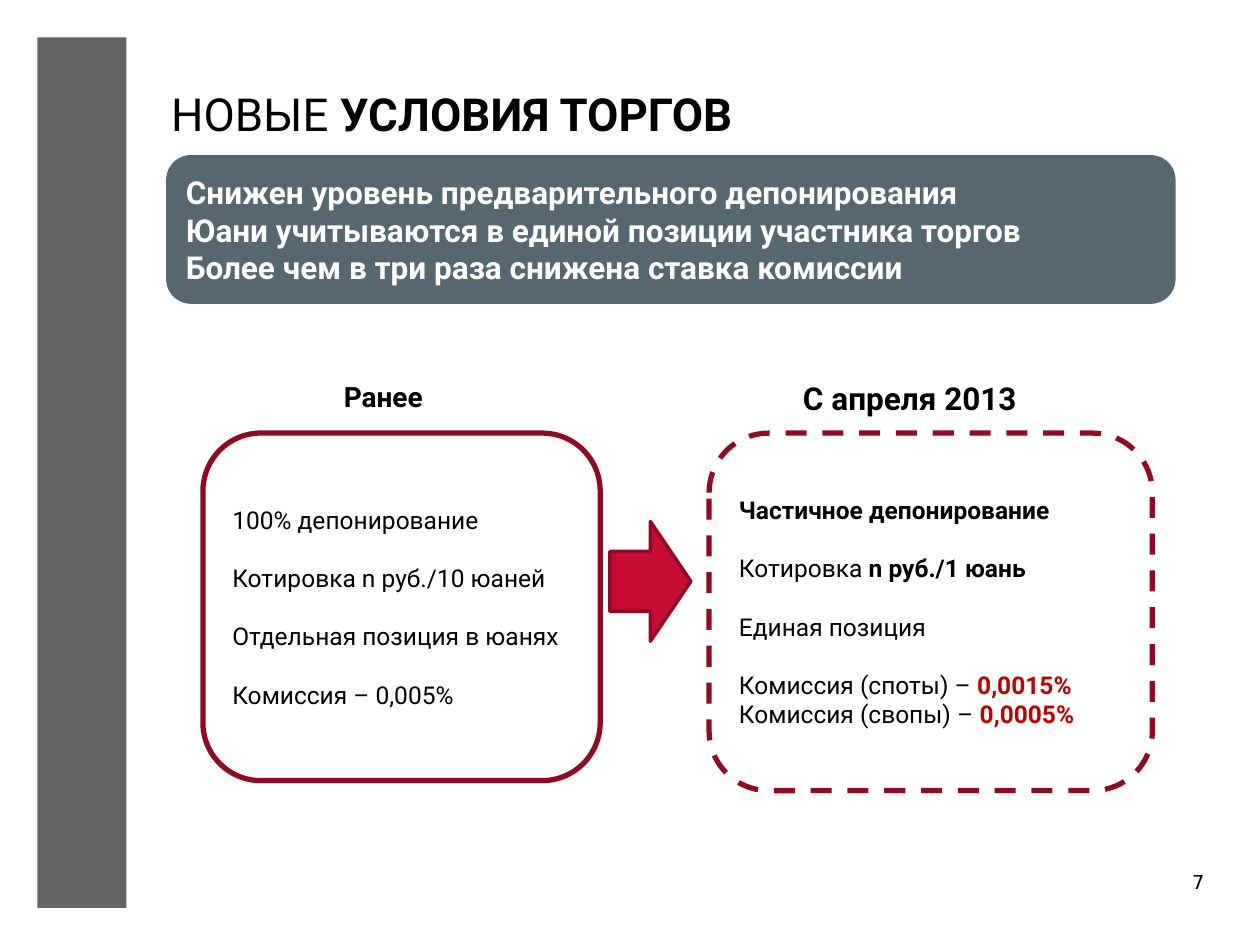
from pptx import Presentation
from pptx.dml.color import RGBColor
from pptx.enum.dml import MSO_LINE
from pptx.enum.shapes import MSO_SHAPE
from pptx.enum.text import MSO_ANCHOR, PP_ALIGN
from pptx.util import Pt

BLACK = RGBColor(0x00, 0x00, 0x00)
WHITE = RGBColor(0xFF, 0xFF, 0xFF)
GRAY = RGBColor(0x61, 0x63, 0x65)
SLATE = RGBColor(0x55, 0x67, 0x71)
RED = RGBColor(0xC6, 0x0C, 0x30)
MAROON = RGBColor(0x92, 0x09, 0x24)
ACCENT = RGBColor(0xC0, 0x00, 0x00)


class SlideBuilder:
    """Holds the text style and the current slide and adds elements to it."""

    def __init__(self, slide, font="Roboto"):
        self.slide = slide
        self.font = font

    def shape(self, kind, box, fill=None, line=None, width=0, dash=None):
        s = self.slide.shapes.add_shape(kind, *map(Pt, box))
        s.shadow.inherit = False
        if fill is None:
            s.fill.background()
        else:
            s.fill.solid()
            s.fill.fore_color.rgb = fill
        if line is None:
            s.line.fill.background()
        else:
            s.line.color.rgb = line
            s.line.width = Pt(width)
            if dash is not None:
                s.line.dash_style = dash
        return s

    def paragraph(self, p, runs, size, color=BLACK, align=PP_ALIGN.LEFT, font=None):
        p.alignment = align
        p.font.name = font or self.font
        p.font.size = Pt(size)
        p.font.color.rgb = color
        p.font.bold = all(bold for _, bold, _ in runs)
        for text, bold, run_color in runs:
            r = p.add_run()
            r.text = text
            if bold != p.font.bold:
                r.font.bold = bold
            if run_color is not None:
                r.font.color.rgb = run_color

    def text(self, box, runs, size, align=PP_ALIGN.LEFT, font=None):
        s = self.slide.shapes.add_textbox(*map(Pt, box))
        tf = s.text_frame
        tf.word_wrap = True
        self.paragraph(tf.paragraphs[0], runs, size, align=align, font=font)
        return tf

    def panel(self, box, lines, size, color=BLACK, **style):
        s = self.shape(MSO_SHAPE.ROUNDED_RECTANGLE, box, **style)
        tf = s.text_frame
        tf.word_wrap = True
        tf.vertical_anchor = MSO_ANCHOR.MIDDLE
        for i, (gap, runs) in enumerate(lines):
            p = tf.add_paragraph() if i else tf.paragraphs[0]
            if gap:
                p.space_before = Pt(gap)
            self.paragraph(p, runs, size, color)


def plain(text):
    return text, False, None


def bold(text, color=None):
    return text, True, color


def main():
    prs = Presentation()
    prs.slide_width, prs.slide_height = Pt(720), Pt(540)
    sb = SlideBuilder(prs.slides.add_slide(prs.slide_layouts[6]))
    gap = 16.5

    sb.shape(MSO_SHAPE.RECTANGLE, (21.3, 21.3, 51, 497.5), fill=GRAY)
    tf = sb.text((660.2, 487.4, 28.1, 28.1), [plain("7")], 11, PP_ALIGN.RIGHT, "DejaVu Sans")
    tf.margin_left = tf.margin_right = 0
    tf.paragraphs[0].line_spacing = 1.5

    sb.text((90.7, 45.4, 584, 88.6), [plain("НОВЫЕ "), bold("УСЛОВИЯ ТОРГОВ")], 26)

    before = [
        (0, [plain("100% депонирование")]),
        (gap, [plain("Котировка n руб./10 юаней")]),
        (gap, [plain("Отдельная позиция в юанях")]),
        (gap, [plain("Комиссия – 0,005%")]),
    ]
    after = [
        (0, [bold("Частичное депонирование")]),
        (gap, [plain("Котировка "), bold("n руб./1 юань")]),
        (gap, [plain("Единая позиция")]),
        (gap, [plain("Комиссия (споты) – "), bold("0,0015%", ACCENT)]),
        (0, [plain("Комиссия (свопы) – "), bold("0,0005%", ACCENT)]),
    ]
    sb.panel((116, 247.5, 227, 198.6), before, 14, line=MAROON, width=3)
    sb.panel((405.2, 247.5, 253.3, 204.3), after, 14, line=MAROON, width=3, dash=MSO_LINE.DASH)

    sb.text((80, 213.1, 278, 28), [bold("Ранее")], 16, PP_ALIGN.CENTER)
    sb.text((380.9, 213.1, 278, 28), [bold("С апреля 2013")], 18, PP_ALIGN.CENTER)
    sb.shape(MSO_SHAPE.RIGHT_ARROW, (348.5, 298, 46.3, 68.4), fill=RED, line=MAROON, width=2)

    summary = [
        "Снижен уровень предварительного депонирования",
        "Юани учитываются в единой позиции участника торгов",
        "Более чем в три раза снижена ставка комиссии",
    ]
    sb.panel((95, 88.6, 576.8, 85), [(0, [bold(t)]) for t in summary], 18, WHITE, fill=SLATE)

    prs.save("out.pptx")


if __name__ == "__main__":
    main()
